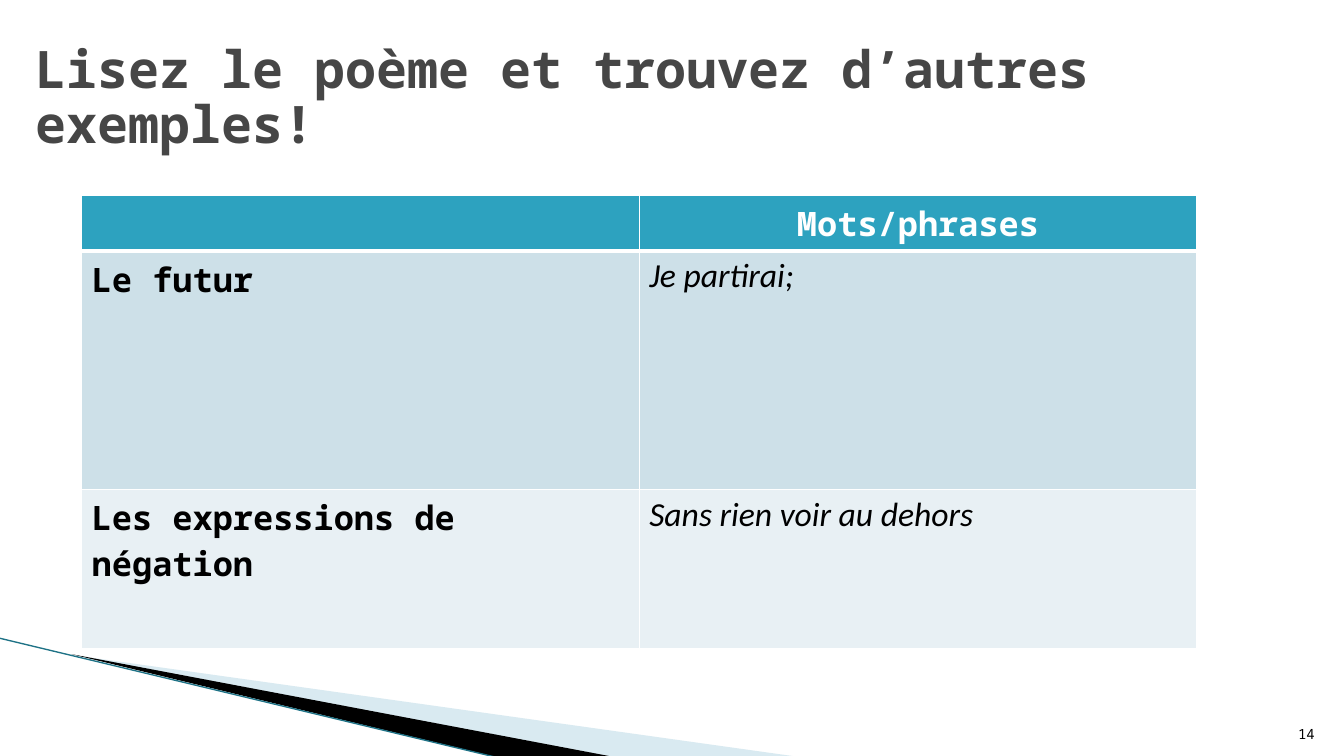
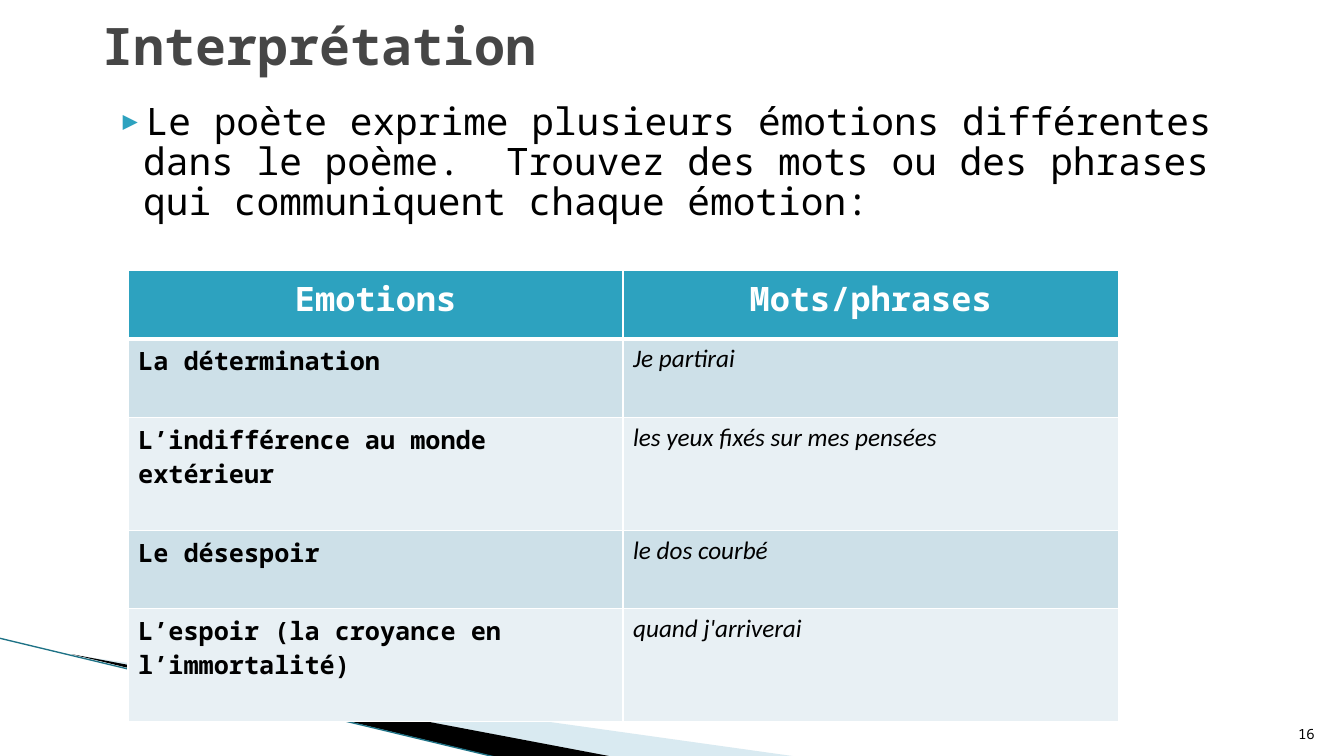
from lxml import etree
from pptx import Presentation
from pptx import util as u
from pptx.dml.color import RGBColor
from pptx.enum import shapes, text
from pptx.oxml import ns

MONO, SERIES = "Noto Sans Mono", "Calibri"
TEAL, GREY, BLACK, WHITE = "2DA2BF", "464646", "000000", "FFFFFF"
PALE_BLUE, EDGE = "A0CBDC", "1E7286"
BANDS = ("CDE0E8", "E8F0F4")


def rgb(value):
    return RGBColor.from_string(value)


def sub(parent, tag, **attrs):
    return etree.SubElement(parent, ns.qn(tag), attrs)


def style(p, size, color, name=MONO, bold=False, italic=False, align=text.PP_ALIGN.LEFT):
    p.alignment = align
    for r in p.runs:
        f = r.font
        f.size, f.name, f.bold, f.italic = u.Pt(size), name, bold, italic
        f.color.rgb = rgb(color)


def place(sp, box):
    sp.left, sp.top, sp.width, sp.height = (u.Inches(v) for v in box)


def add_wedge(slide, points, color, alpha=None):
    pts = [(u.Inches(x), u.Inches(y)) for x, y in points]
    builder = slide.shapes.build_freeform(*pts[0])
    builder.add_line_segments(pts[1:], close=True)
    sp = builder.convert_to_shape()
    sp.shadow.inherit = False
    sp.fill.solid()
    sp.fill.fore_color.rgb = rgb(color)
    sp.line.fill.background()
    if alpha:
        clr = sp._element.spPr.find(".//" + ns.qn("a:srgbClr"))
        sub(clr, "a:alpha", val=str(alpha * 1000))


def add_corner(slide):
    """Sweeping wedges at the bottom left."""
    add_wedge(slide, [(0.73, 6.5), (7.93, 7.51), (6.08, 7.51)], PALE_BLUE, 40)
    add_wedge(slide, [(0.71, 6.49), (6.09, 7.51), (4.96, 7.52)], BLACK)
    line = slide.shapes.add_connector(
        shapes.MSO_CONNECTOR.STRAIGHT,
        *(u.Inches(v) for v in (-0.01, 6.33, 4.95, 7.52)))
    line.line.color.rgb = rgb(EDGE)
    line.line.width = u.Pt(0.95)
    sub(line._element.spPr, "a:effectLst")


def add_number(slide, number):
    sp = slide.shapes.add_textbox(*(u.Inches(v) for v in (12.61, 7.01, 0.53, 0.4)))
    tf = sp.text_frame
    tf.word_wrap = True
    tf.vertical_anchor = text.MSO_ANCHOR.BOTTOM
    tf.text = str(number)
    style(tf.paragraphs[0], 10, BLACK, align=text.PP_ALIGN.RIGHT)


def set_title(slide, box, words):
    place(slide.shapes.title, box)
    tf = slide.shapes.title.text_frame
    tf.text = words
    tf.auto_size = text.MSO_AUTO_SIZE.NONE
    tf.vertical_anchor = text.MSO_ANCHOR.MIDDLE
    p = tf.paragraphs[0]
    p.line_spacing = 0.9
    style(p, 36.9, GREY, bold=True)


def set_body(sp, box, words):
    place(sp, box)
    tf = sp.text_frame
    tf.text = words
    tf.auto_size = text.MSO_AUTO_SIZE.NONE
    p = tf.paragraphs[0]
    p.line_spacing = 0.89
    p.space_before = u.Pt(0)
    # Teal triangle bullet with a hanging indent
    pPr = p._p.get_or_add_pPr()
    pPr.set("marL", str(u.Inches(0.4)))
    pPr.set("indent", str(u.Inches(-0.28)))
    sub(sub(pPr, "a:buClr"), "a:srgbClr", val=TEAL)
    sub(pPr, "a:buSzPct", val="68000")
    sub(pPr, "a:buFont", typeface=MONO)
    sub(pPr, "a:buChar", char="▶")
    style(p, 27, BLACK)


def set_borders(cell, top, bottom):
    tcPr = cell._tc.get_or_add_tcPr()
    for side, width in (("L", 1), ("R", 1), ("T", top), ("B", bottom)):
        ln = sub(tcPr, "a:ln" + side, w=str(u.Pt(width)))
        sub(sub(ln, "a:solidFill"), "a:srgbClr", val=WHITE)


def add_grid(slide, left, top, width, heights, rows, size):
    """Two equal columns: a header row, then labels with quoted examples."""
    frame = slide.shapes.add_table(len(rows), 2, u.Inches(left), u.Inches(top),
                                   u.Inches(width), u.Inches(sum(heights)))
    table = frame.table
    for i, (height, row) in enumerate(zip(heights, rows)):
        table.rows[i].height = u.Inches(height)
        for j, words in enumerate(row):
            cell = table.cell(i, j)
            set_borders(cell, 3 if i == 1 else 1, 3 if i == 0 else 1)
            cell.fill.solid()
            cell.fill.fore_color.rgb = rgb(BANDS[(i - 1) % 2] if i else TEAL)
            cell.text = words
            p = cell.text_frame.paragraphs[0]
            if i == 0:
                style(p, 24, WHITE, bold=True, align=text.PP_ALIGN.CENTER)
            elif j == 0:
                style(p, size, BLACK, bold=True)
            else:
                style(p, size, BLACK, SERIES, italic=True)


def new_slide(prs, layout, number):
    slide = prs.slides.add_slide(prs.slide_layouts[layout])
    add_corner(slide)
    add_number(slide, number)
    return slide


def poem_slide(prs):
    s = new_slide(prs, 5, 14)
    set_title(s, (0.25, 0.28, 12.16, 1.41), "Lisez le poème et trouvez d’autres exemples!")
    add_grid(s, 0.81, 1.94, 11.06, (0.55, 2.37, 1.57), [
        ("", "Mots/phrases"),
        ("Le futur", "Je partirai;"),
        ("Les expressions de négation", "Sans rien voir au dehors"),
    ], 24)


def interpretation_slide(prs):
    s = new_slide(prs, 1, 16)
    set_title(s, (0.92, 0.28, 11.5, 0.41), "Interprétation")
    set_body(s.placeholders[1], (0.92, 0.97, 11.5, 5.79),
             "Le poète exprime plusieurs émotions différentes dans le poème.  "
             "Trouvez des mots ou des phrases qui communiquent chaque émotion:")
    add_grid(s, 1.27, 2.68, 9.82, (0.68, 0.78, 1.12, 0.78, 1.12), [
        ("Emotions", "Mots/phrases"),
        ("La détermination", "Je partirai"),
        ("L’indifférence au monde extérieur", "les yeux fixés sur mes pensées"),
        ("Le désespoir", "le dos courbé"),
        ("L’espoir (la croyance en l’immortalité)", "quand j'arriverai"),
    ], 18)


def main():
    prs = Presentation()
    prs.slide_width, prs.slide_height = u.Inches(13.33), u.Inches(7.5)
    poem_slide(prs)
    interpretation_slide(prs)
    prs.save("out.pptx")


if __name__ == "__main__":
    main()
